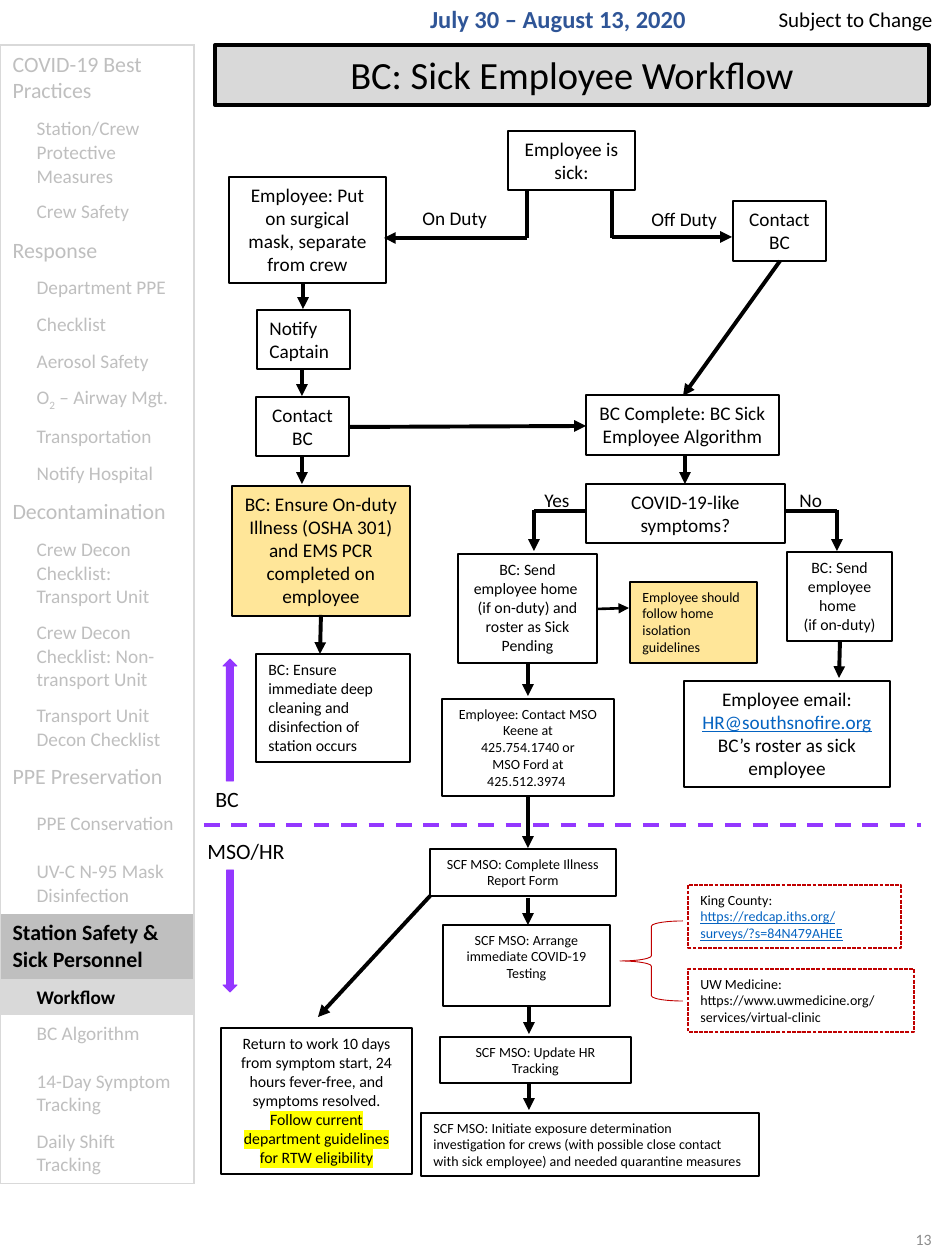
"""Build the sick employee workflow slide: section menu, flowchart and reference boxes."""
from dataclasses import dataclass
from lxml.etree import SubElement
from pptx import Presentation
from pptx.dml.color import RGBColor
from pptx.enum.dml import MSO_LINE_DASH_STYLE as DASH
from pptx.enum.shapes import MSO_CONNECTOR, MSO_SHAPE as SHAPE
from pptx.enum.text import MSO_ANCHOR as ANCHOR, MSO_AUTO_SIZE as AUTO, PP_ALIGN as ALIGN
from pptx.oxml.ns import qn
from pptx.util import Emu, Pt


@dataclass(frozen=True)
class Theme:
    font: str = "Calibri"
    black: str = "000000"
    blue: str = "2F5597"
    link: str = "0563C1"
    muted: str = "BFBFBF"
    pale: str = "D9D9D9"
    number: str = "8C8C8C"
    amber: str = "FFE699"
    yellow: str = "FFFF00"
    purple: str = "9437FF"
    red: str = "C00000"
    title: float = 22
    date: float = 14
    head: float = 12.5
    note: float = 12
    body: float = 11
    small: float = 9
    tiny: float = 8


T = Theme()
PX = 914400 / 126
RGB = RGBColor.from_string
L, C, R = ALIGN.LEFT, ALIGN.CENTER, ALIGN.RIGHT


def write(tf, paras, size, align=L, color=T.black, bold=False):
    tf.word_wrap = True
    tf.vertical_anchor = ANCHOR.TOP
    for i, runs in enumerate(paras):
        p = tf.paragraphs[0] if i == 0 else tf.add_paragraph()
        p.alignment = align
        p.font.name, p.font.size, p.font.bold = T.font, Pt(size), bold
        p.font.color.rgb = RGB(color)
        for text, style in [(runs, "")] if isinstance(runs, str) else runs:
            r = p.add_run()
            r.text = text
            if style == "link":
                r.font.color.rgb = RGB(T.link)
                r.font.underline = True
            elif style == "sub":
                r.font._element.set("baseline", "-25000")
            elif style == "mark":
                mark = SubElement(r.font._element, qn("a:highlight"))
                SubElement(mark, qn("a:srgbClr"), val=T.yellow)


def connect(x1, y1, x2, y2, arrow=True, width=2.25, color=T.black):
    s = shapes.add_connector(MSO_CONNECTOR.STRAIGHT, *[Emu(round(v * PX)) for v in (x1, y1, x2, y2)])
    s.line.color.rgb, s.line.width = RGB(color), Pt(width)
    if arrow:
        SubElement(s.line._get_or_add_ln(), qn("a:tailEnd"), type="triangle")
    SubElement(s._element.spPr, qn("a:effectLst"))
    return s


prs = Presentation()
prs.slide_width, prs.slide_height = Emu(round(945 * PX)), Emu(round(1260 * PX))
slide = prs.slides.add_slide(prs.slide_layouts[5])
shapes = slide.shapes

s = shapes.title
s.left, s.top, s.width, s.height = [Emu(round(v * PX)) for v in (215, 45, 714, 60)]
s.fill.solid()
s.fill.fore_color.rgb = RGB(T.pale)
s.line.color.rgb, s.line.width = RGB(T.black), Pt(2.25)
s.text_frame.auto_size = AUTO.NONE
write(s.text_frame, ["BC: Sick Employee Workflow"], T.title, C)

labels = [
    (386, -2, 344, 60, "July 30 – August 13, 2020", T.date, C, T.blue, True),
    (732, 0, 213, 38, "Subject to Change", T.note, R, T.black, False),
    (731, 1224, 213, 36, "13", T.small, R, T.number, False),
    (410, 200, 91, 37, "On Duty", T.body, L, T.black, False),
    (639, 201, 97, 37, "Off Duty", T.body, L, T.black, False),
    (532, 482, 54, 37, "Yes", T.body, L, T.black, False),
    (787, 482, 62, 37, "No", T.body, L, T.black, False),
    (203, 779, 56, 39, "BC", T.head, L, T.black, False),
    (190, 831, 112, 39, "MSO/HR", T.head, C, T.black, False),
]
for x, y, w, h, text, size, align, color, bold in labels:
    s = shapes.add_textbox(*[Emu(round(v * PX)) for v in (x, y, w, h)])
    write(s.text_frame, [text], size, align, color, bold)

menu = [
    (66, 0, "COVID-19 Best Practices"), (83, 1, "Station/Crew Protective Measures"),
    (37, 1, "Crew Safety"), (39, 0, "Response"), (37, 1, "Department PPE"),
    (37, 1, "Checklist"), (36, 1, "Aerosol Safety"),
    (37, 1, [("O", ""), ("2", "sub"), (" – Airway Mgt.", "")]),
    (37, 1, "Transportation"), (37, 1, "Notify Hospital"), (39, 0, "Decontamination"),
    (83, 1, "Crew Decon Checklist: Transport Unit"),
    (83, 1, "Crew Decon Checklist: Non-transport Unit"),
    (60, 1, "Transport Unit Decon Checklist"), (48, 0, "PPE Preservation"),
    (48, 1, "PPE Conservation"), (60, 1, "UV-C N-95 Mask Disinfection"),
    (66, 0, "Station Safety & Sick Personnel"), (36, 1, "Workflow"),
    (48, 1, "BC Algorithm"), (60, 1, "14-Day Symptom Tracking"), (60, 1, "Daily Shift Tracking"),
]
current = {17: T.muted, 18: T.pale}
total = sum(h for h, _, _ in menu)
s = shapes.add_table(len(menu), 1, *[Emu(round(v * PX)) for v in (0, 45, 194, total)])
table = s.table
table.first_row = table.horz_banding = False
table._tbl.tblPr.find(qn("a:tableStyleId")).text = "{2D5ABB26-0587-4C30-8999-92F81FD0307C}"
for i, (h, level, text) in enumerate(menu):
    table.rows[i].height = Emu(round(h * PX))
    cell = table.cell(i, 0)
    tcPr = cell._tc.get_or_add_tcPr()
    sides = ["lnL", "lnR"] + ["lnT"] * (i == 0) + ["lnB"] * (i == len(menu) - 1)
    for side in sides:
        ln = SubElement(tcPr, qn(f"a:{side}"), w=str(Pt(1)))
        SubElement(SubElement(ln, qn("a:solidFill")), qn("a:srgbClr"), val=T.pale)
    cell.fill.background()
    if i in current:
        cell.fill.solid()
        cell.fill.fore_color.rgb = RGB(current[i])
    write(cell.text_frame, [text], T.body if level else T.head,
          color=T.black if i in current else T.muted, bold=i in current)
    cell.text_frame.paragraphs[0]._p.get_or_add_pPr().set("marL", str(round(24 * level * PX)))

boxes = [
    (508, 131, 127, 59, T.body, C, ["Employee is sick:"]),
    (229, 177, 157, 106, T.body, C, ["Employee: Put on surgical mask, separate from crew"]),
    (733, 201, 93, 60, T.body, C, ["Contact BC"]),
    (257, 310, 93, 59, T.body, L, ["Notify Captain"]),
    (256, 397, 93, 59, T.body, C, ["Contact BC"]),
    (586, 395, 193, 60, T.body, C, ["BC Complete: BC Sick Employee Algorithm"]),
    (586, 484, 199, 59, T.body, C, ["COVID-19-like symptoms?"]),
    (684, 681, 206, 106, T.body, C,
     [[("Employee email: ", ""), ("HR@southsnofire.org", "link"), (" BC’s roster as sick employee", "")]]),
    (232, 486, 178, 130, T.body, C,
     ["BC: Ensure On-duty Illness (OSHA 301) and EMS PCR completed on employee"]),
    (458, 554, 139, 109, T.small, C,
     ["BC: Send employee home ", "(if on-duty) and roster as Sick Pending"]),
    (787, 552, 105, 89, T.small, C, ["BC: Send employee home ", "(if on-duty)"]),
    (630, 582, 127, 81, T.tiny, L, ["Employee should", "follow home isolation guidelines"]),
    (256, 654, 154, 108, T.small, L,
     ["BC: Ensure immediate deep cleaning and disinfection of station occurs"]),
    (442, 699, 172, 97, T.tiny, C,
     ["Employee: Contact MSO Keene at", "425.754.1740 or", "MSO Ford at 425.512.3974 "]),
    (430, 849, 186, 47, T.tiny, C, ["SCF MSO: Complete Illness Report Form"]),
    (443, 925, 167, 81, T.tiny, C, ["SCF MSO: Arrange immediate COVID-19 Testing"]),
    (440, 1037, 191, 46, T.tiny, C, ["SCF MSO: Update HR Tracking"]),
    (421, 1113, 338, 63, T.tiny, L,
     ["SCF MSO: Initiate exposure determination", "investigation for crews (with possible close contact",
      "with sick employee) and needed quarantine measures"]),
    (221, 1028, 191, 146, T.small, C,
     [[("Return to work 10 days from symptom start, 24 hours fever-free, and symptoms resolved. ", ""),
       ("Follow current department guidelines for RTW eligibility", "mark")]]),
    (688, 885, 213, 63, T.tiny, L,
     ["King County:", [("https://redcap.iths.org/surveys/?s=84N479AHEE", "link")]]),
    (688, 969, 226, 63, T.tiny, L,
     ["UW Medicine:", "https://www.uwmedicine.org/services/virtual-clinic"]),
]
for x, y, w, h, size, align, paras in boxes:
    s = shapes.add_shape(SHAPE.RECTANGLE, *[Emu(round(v * PX)) for v in (x, y, w, h)])
    s.shadow.inherit = False
    s.fill.background()
    s.line.color.rgb, s.line.width = RGB(T.black), Pt(1.5)
    if paras[0] == "Employee should" or "OSHA" in paras[0]:
        s.fill.solid()
        s.fill.fore_color.rgb = RGB(T.amber)
    elif paras[0] in ("King County:", "UW Medicine:"):
        s.line.color.rgb, s.line.width = RGB(T.red), Pt(0.75)
        s.line.dash_style = DASH.SQUARE_DOT
    write(s.text_frame, paras, size, align)

for ends in [(527, 190, 527, 238), (612, 190, 612, 238), (534, 511, 586, 511), (785, 511, 837, 511)]:
    connect(*ends, arrow=False)
arrows = [
    (527, 238, 384, 238), (612, 237, 732, 237), (303, 283, 303, 309), (302, 369, 302, 396),
    (302, 456, 302, 484), (349, 427, 586, 426), (780, 261, 683, 396), (685, 456, 685, 484),
    (534, 510, 534, 551), (837, 510, 837, 551), (528, 663, 528, 696), (840, 641, 839, 678),
    (321, 615, 320, 654), (528, 797, 528, 848), (528, 898, 528, 925), (529, 1006, 529, 1034),
    (529, 1084, 529, 1110), (430, 896, 318, 1017),
]
for ends in arrows:
    connect(*ends)
connect(597, 609, 629, 608, width=1.5)
connect(204, 825, 921, 825, arrow=False, color=T.purple).line.dash_style = DASH.DASH

for y, turn in [(659, 0), (870, 180)]:
    s = shapes.add_shape(SHAPE.UP_ARROW, *[Emu(round(v * PX)) for v in (223, y, 14, 122)])
    s.rotation = turn
    s.shadow.inherit = False
    s.fill.solid()
    s.fill.fore_color.rgb = RGB(T.purple)
    s.line.color.rgb, s.line.width = RGB(T.purple), Pt(0.5)

s = shapes.add_shape(SHAPE.LEFT_BRACE, *[Emu(round(v * PX)) for v in (620, 921, 63, 80)])
s.shadow.inherit = False
s.fill.background()
s.line.color.rgb, s.line.width = RGB(T.red), Pt(0.5)

prs.save("out.pptx")
